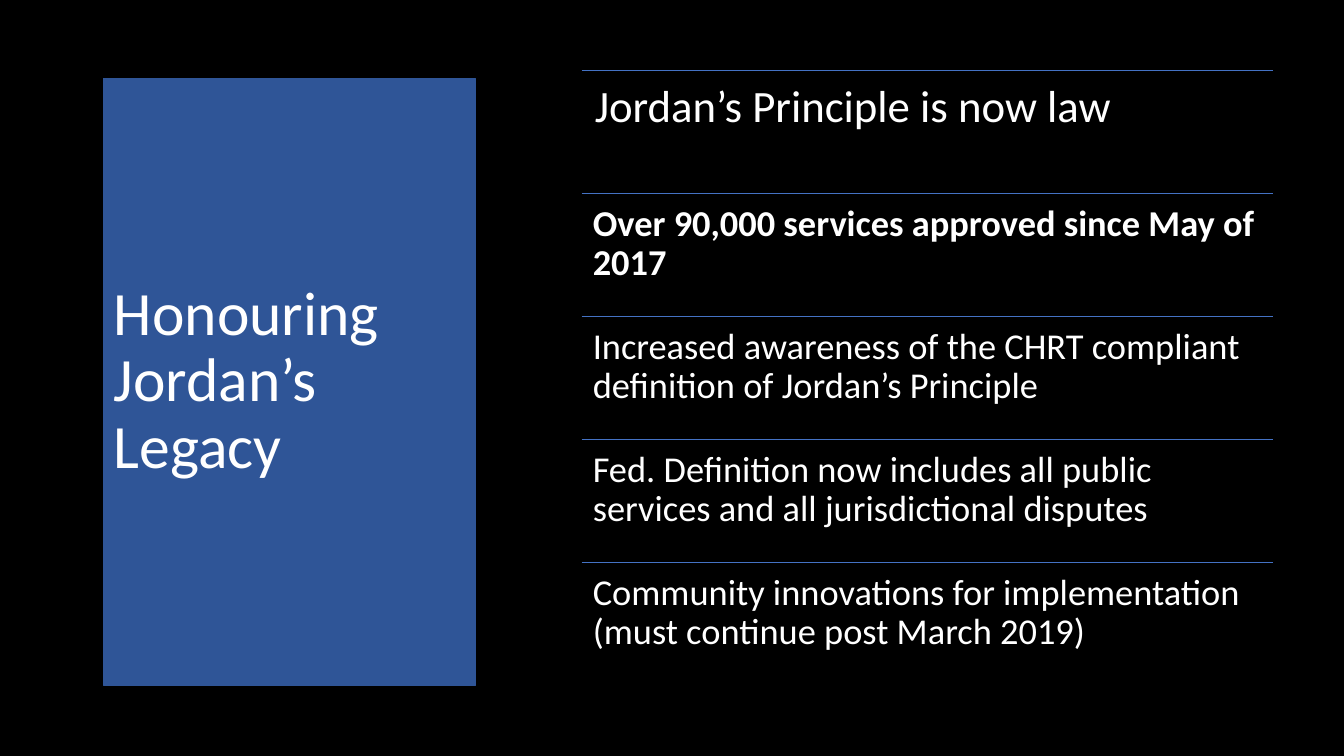
from lxml import etree
from pptx import Presentation
from pptx.dml.color import RGBColor
from pptx.enum import shapes, text
from pptx.oxml import ns
from pptx.util import Cm, Pt

BLACK = RGBColor(0, 0, 0)
WHITE = RGBColor(255, 255, 255)
NAVY = RGBColor(0x2F, 0x55, 0x97)
BLUE = RGBColor(0x44, 0x72, 0xC4)

LEFT, TOP = Cm(14.66), Cm(1.78)
WIDTH, STEP = Cm(17.42), Cm(3.1)

ROWS = [
    ("Jordan’s Principle is now law", dict(size=32, inset=Cm(0.33))),
    ("Over 90,000 services approved since May of 2017", dict(bold=True)),
    ("Increased awareness of the CHRT compliant definition of Jordan’s Principle", {}),
    ("Fed. Definition now includes all public services and all jurisdictional disputes", {}),
    ("Community innovations for implementation (must continue post March 2019)", {}),
]


def write(shape, words, size=26, bold=False, inset=Cm(0.28),
          anchor=text.MSO_ANCHOR.TOP):
    frame = shape.text_frame
    frame.word_wrap = True
    frame.auto_size = text.MSO_AUTO_SIZE.NONE
    frame.vertical_anchor = anchor
    frame.margin_left = frame.margin_right = inset
    frame.margin_top = frame.margin_bottom = inset
    para = frame.paragraphs[0]
    para.alignment = text.PP_ALIGN.LEFT
    para.line_spacing = 0.9
    run = para.add_run()
    run.text = words
    font = run.font
    font.name = "Calibri"
    font.size = Pt(size)
    font.bold = bold
    font.color.rgb = WHITE


def head(slide, words):
    title = slide.shapes.title
    title.left, title.top = Cm(2.62), Cm(1.98)
    title.width, title.height = Cm(9.37), Cm(15.29)
    title.fill.solid()
    title.fill.fore_color.rgb = NAVY
    title.line.color.rgb = NAVY
    title.line.width = Pt(0.75)
    write(title, words, size=44, inset=Cm(0.25),
          anchor=text.MSO_ANCHOR.MIDDLE)


def rule(slide, top):
    line = slide.shapes.add_connector(
        shapes.MSO_CONNECTOR.STRAIGHT, LEFT, top, LEFT + WIDTH, top)
    line.line.color.rgb = BLUE
    line.line.width = Pt(1)
    etree.SubElement(line._element.spPr, ns.qn("a:effectLst"))


def row(slide, top, words, style):
    rule(slide, top)
    box = slide.shapes.add_textbox(LEFT, top, WIDTH, STEP)
    write(box, words, **style)


def main():
    deck = Presentation()
    deck.slide_width, deck.slide_height = Cm(33.87), Cm(19.05)
    slide = deck.slides.add_slide(deck.slide_layouts.get_by_name("Title Only"))
    slide.background.fill.solid()
    slide.background.fill.fore_color.rgb = BLACK
    head(slide, "Honouring Jordan’s Legacy")
    for i, (words, style) in enumerate(ROWS):
        row(slide, TOP + i * STEP, words, style)
    deck.save("out.pptx")


if __name__ == "__main__":
    main()
